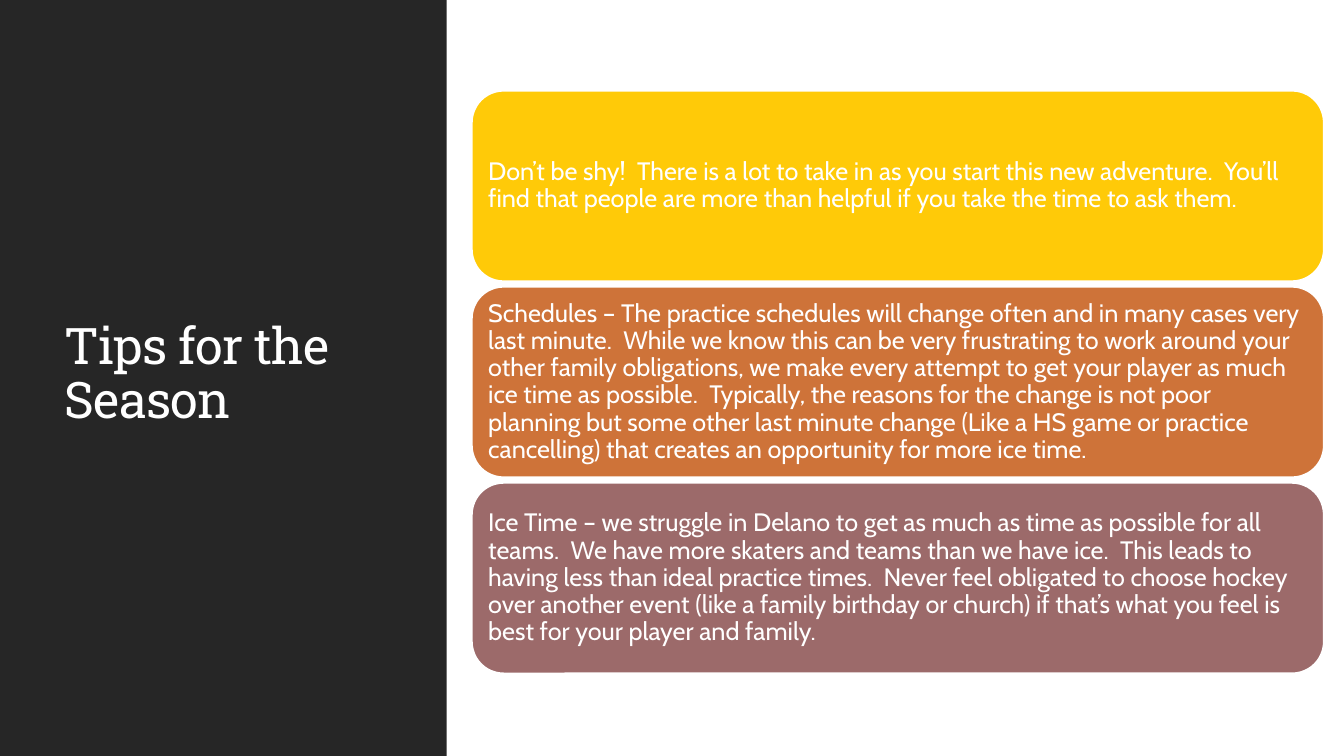
from pptx import Presentation
from pptx.dml.color import RGBColor
from pptx.enum.shapes import MSO_SHAPE as Shape
from pptx.enum.text import MSO_ANCHOR as Anchor, MSO_AUTO_SIZE as AutoSize, PP_ALIGN as Align
from pptx.util import Inches, Pt

TITLE = "Tips for the Season"
TIPS = [
    ("yellow", "Don’t be shy!  There is a lot to take in as you start this new adventure.  "
     "You’ll find that people are more than helpful if you take the time to ask them."),
    ("orange", "Schedules – The practice schedules will change often and in many cases very "
     "last minute.  While we know this can be very frustrating to work around your other "
     "family obligations, we make every attempt to get your player as much ice time as "
     "possible.  Typically, the reasons for the change is not poor planning but some other "
     "last minute change (Like a HS game or practice cancelling) that creates an "
     "opportunity for more ice time."),
    ("mauve", "Ice Time – we struggle in Delano to get as much as time as possible for all "
     "teams.  We have more skaters and teams than we have ice.  This leads to having less "
     "than ideal practice times.  Never feel obligated to choose hockey over another event "
     "(like a family birthday or church) if that’s what you feel is best for your player "
     "and family."),
]
COLORS = {"dark": "262626", "white": "FFFFFF", "yellow": "FFCA08",
          "orange": "CE7339", "mauve": "9C6A6A"}
CARD_LEFT, CARD_TOP, CARD_WIDTH, CARD_HEIGHT = 4.68, 0.9, 8.45, 1.89
CARD_PITCH = 1.945
CARD_INSET = Inches(0.07)


def color(name):
    return RGBColor.from_string(COLORS[name])


def add_filled_shape(slide, kind, left, top, width, height, fill):
    shape = slide.shapes.add_shape(kind, Inches(left), Inches(top), Inches(width), Inches(height))
    shape.shadow.inherit = False
    shape.fill.solid()
    shape.fill.fore_color.rgb = color(fill)
    shape.line.fill.background()
    return shape


def set_text(shape, text, font_name, size):
    """Write one left-aligned white paragraph, centred vertically."""
    frame = shape.text_frame
    frame.text = text
    frame.word_wrap = True
    frame.auto_size = AutoSize.NONE
    frame.vertical_anchor = Anchor.MIDDLE
    paragraph = frame.paragraphs[0]
    paragraph.alignment = Align.LEFT
    paragraph.line_spacing = 0.9
    paragraph.font.name = font_name
    paragraph.font.size = Pt(size)
    paragraph.font.color.rgb = color("white")
    return frame


def add_title_panel(slide):
    add_filled_shape(slide, Shape.RECTANGLE, 0, 0, 4.43, 7.5, "dark")
    title = slide.shapes.title
    title.left, title.top = Inches(0.54), Inches(0.57)
    title.width, title.height = Inches(3.37), Inches(6.31)
    frame = set_text(title, TITLE, "Roboto Slab", 36)
    frame.paragraphs[0].runs[0].font._element.set("spc", "-50")
    slide.shapes._spTree.append(title._element)  # bring the title in front of the panel


def add_tip_card(slide, row, fill, text):
    card = add_filled_shape(slide, Shape.ROUNDED_RECTANGLE, CARD_LEFT,
                            CARD_TOP + row * CARD_PITCH, CARD_WIDTH, CARD_HEIGHT, fill)
    card.line.color.rgb = color("white")
    card.line.width = Pt(1.25)
    frame = set_text(card, text, "Cabin", 18)
    frame.margin_left = frame.margin_right = CARD_INSET
    frame.margin_top = frame.margin_bottom = CARD_INSET


def main():
    presentation = Presentation()
    presentation.slide_width, presentation.slide_height = Inches(13.33), Inches(7.5)
    slide = presentation.slides.add_slide(presentation.slide_layouts[5])
    add_title_panel(slide)
    for row, (fill, text) in enumerate(TIPS):
        add_tip_card(slide, row, fill, text)
    presentation.save("out.pptx")


if __name__ == "__main__":
    main()
